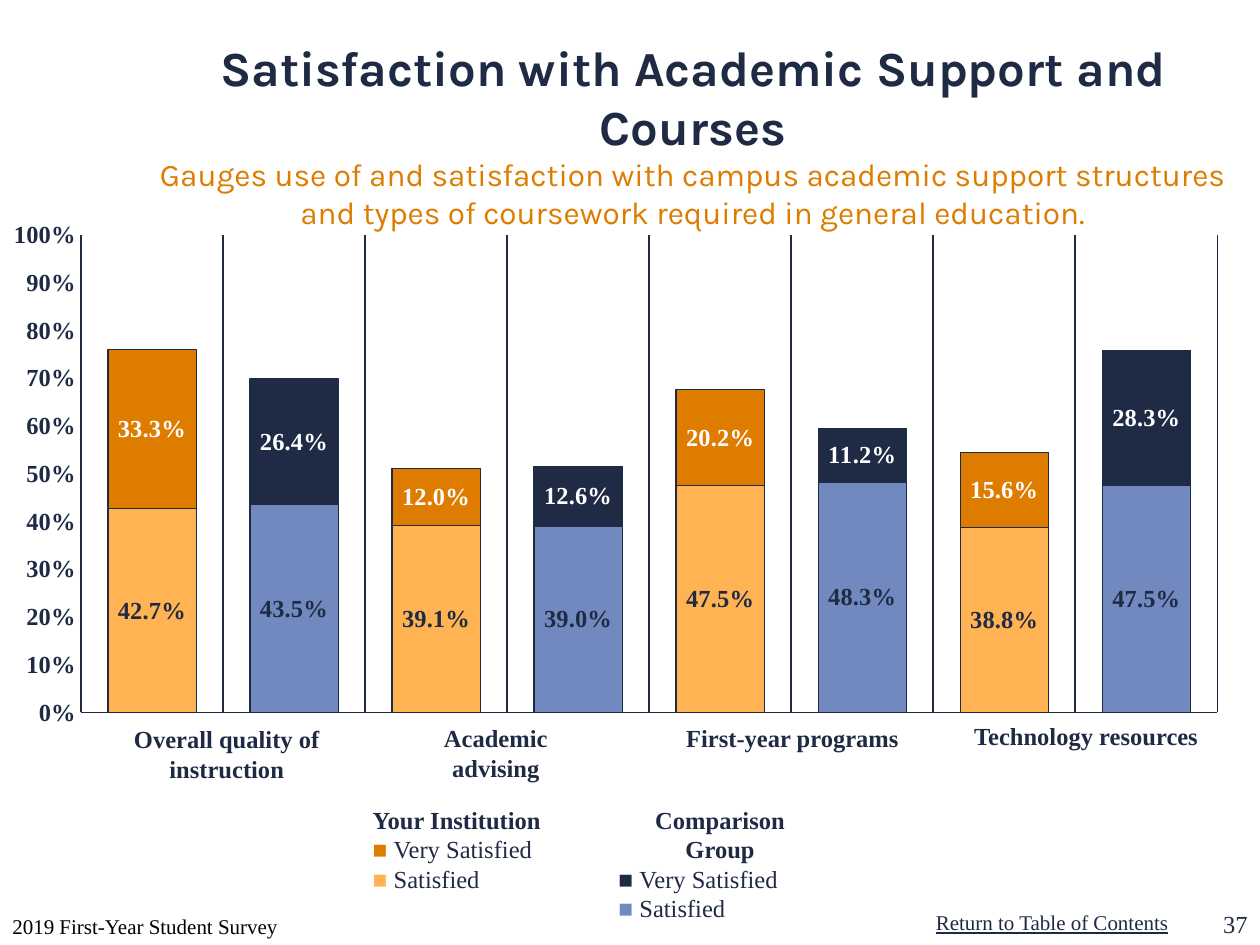
from dataclasses import dataclass

from lxml import etree
from pptx import Presentation
from pptx.chart.data import CategoryChartData
from pptx.dml.color import RGBColor
from pptx.enum.chart import XL_CHART_TYPE as ChartType
from pptx.enum.chart import XL_LABEL_POSITION as LabelPosition
from pptx.enum.chart import XL_TICK_LABEL_POSITION as TickLabels
from pptx.enum.chart import XL_TICK_MARK as TickMark
from pptx.enum.text import MSO_ANCHOR as Anchor
from pptx.enum.text import MSO_AUTO_SIZE as AutoSize
from pptx.enum.text import PP_ALIGN as Align
from pptx.oxml.ns import qn
from pptx.util import Inches, Pt


@dataclass(frozen=True)
class Theme:
    """Colours, fonts and type sizes of the deck."""
    navy: str = "1F2A44"
    orange: str = "DE7C00"
    light_orange: str = "FFB352"
    blue: str = "7289BF"
    white: str = "FFFFFF"
    black: str = "000000"
    head_font: str = "Karla"
    body_font: str = "Times New Roman"
    title: int = 28
    subtitle: int = 18
    body: int = 14
    small: int = 12


THEME = Theme()


def style_font(font, size=THEME.body, color=THEME.navy, bold=False,
               name=THEME.body_font, underline=None):
    """Format a font of a text span or a chart part."""
    font.name, font.size, font.bold = name, Pt(size), bold
    font.underline = underline
    font.color.rgb = RGBColor.from_string(color)


def add_span(para, text, **style):
    """Append formatted text to a paragraph."""
    span = para.add_run()
    span.text = text
    style_font(span.font, **style)


def add_box(slide, box, anchor=Anchor.TOP):
    """Add a wrapping text box and return its frame."""
    frame = slide.shapes.add_textbox(*map(Inches, box)).text_frame
    frame.word_wrap = True
    frame.vertical_anchor = anchor
    return frame


def add_text(slide, box, text, align=Align.LEFT, anchor=Anchor.TOP, **style):
    """Add a text box that holds one paragraph."""
    para = add_box(slide, box, anchor).paragraphs[0]
    para.alignment = align
    add_span(para, text, **style)


def place_title(slide, box, heading, subtitle):
    """Fill and move the title placeholder."""
    title = slide.shapes.title
    title.left, title.top, title.width, title.height = map(Inches, box)
    frame = title.text_frame
    frame.word_wrap = True
    frame.auto_size = AutoSize.NONE
    frame.vertical_anchor = Anchor.TOP
    para = frame.paragraphs[0]
    para.alignment = Align.CENTER
    add_span(para, heading, size=THEME.title, bold=True, name=THEME.head_font)
    para.add_line_break()
    add_span(para, subtitle, size=THEME.subtitle, color=THEME.orange,
             name=THEME.head_font)


def style_line(line, width):
    """Give a chart line the navy colour and a width."""
    line.color.rgb = RGBColor.from_string(THEME.navy)
    line.width = Pt(width)


def set_plot_layout(chart, **fractions):
    """Fix the inner plot area as fractions of the chart."""
    plot_area = chart._chartSpace.chart.plotArea
    for old in plot_area.findall(qn("c:layout")):
        plot_area.remove(old)
    layout = etree.Element(qn("c:layout"))
    manual = etree.SubElement(layout, qn("c:manualLayout"))
    settings = {"layoutTarget": "inner", "xMode": "edge", "yMode": "edge"}
    for tag, value in (settings | fractions).items():
        etree.SubElement(manual, qn(f"c:{tag}")).set("val", str(value))
    plot_area.insert(0, layout)


def style_axes(chart):
    """Format the percent axis and the unlabelled category axis."""
    category, value = chart.category_axis, chart.value_axis
    for axis in (category, value):
        axis.major_tick_mark = axis.minor_tick_mark = TickMark.NONE
    category.tick_label_position = TickLabels.NONE
    category.has_major_gridlines = True
    style_line(category.major_gridlines.format.line, 1)
    style_line(category.format.line, 0.75)
    value.has_major_gridlines = False
    value.minimum_scale, value.maximum_scale, value.major_unit = 0, 1, 0.1
    value.tick_labels.number_format = "0%"
    value.tick_labels.number_format_is_linked = False
    style_font(value.tick_labels.font, bold=True)
    style_line(value.format.line, 1)


def style_series(series, colors, label_color):
    """Alternate the column colours and label the values."""
    series.format.fill.solid()
    series.format.fill.fore_color.rgb = RGBColor.from_string(colors[0])
    style_line(series.format.line, 0.75)
    for index in range(len(series.values)):
        point = series.points[index].format
        point.fill.solid()
        point.fill.fore_color.rgb = RGBColor.from_string(colors[index % 2])
        style_line(point.line, 0.75)
    labels = series.data_labels
    labels.show_value = True
    labels.number_format = "0.0%"
    labels.number_format_is_linked = False
    labels.position = LabelPosition.CENTER
    style_font(labels.font, color=label_color, bold=True)


def place_chart(slide, box, satisfied, very_satisfied):
    """Add the stacked columns of both groups."""
    data = CategoryChartData()
    data.categories = [str(number + 1) for number in range(len(satisfied))]
    data.add_series("Satisfied", satisfied)
    data.add_series("Very Satisfied", very_satisfied)
    chart = slide.shapes.add_chart(
        ChartType.COLUMN_STACKED, *map(Inches, box), data).chart
    chart.has_title = chart.has_legend = False
    style_font(chart.font, size=THEME.subtitle, color=THEME.white)
    set_plot_layout(chart, x=0.055, y=0.029, w=0.946, h=0.933)
    style_axes(chart)
    plot = chart.plots[0]
    plot.gap_width, plot.overlap = 61, 100
    plot.vary_by_categories = False
    lower, upper = plot.series
    style_series(lower, (THEME.light_orange, THEME.blue), THEME.navy)
    style_series(upper, (THEME.orange, THEME.navy), THEME.white)


def place_legend(slide, box, heading, colors, align=Align.LEFT, inset=0):
    """Add a group heading and its two colour keys."""
    frame = add_box(slide, box)
    para = frame.paragraphs[0]
    para.alignment = align
    for side in ("marL", "marR"):
        para._p.get_or_add_pPr().set(side, str(Inches(inset)))
    add_span(para, heading, bold=True)
    for color, label in zip(colors, ("Very Satisfied", "Satisfied")):
        para = frame.add_paragraph()
        add_span(para, "■ ", color=color, bold=True)
        add_span(para, label)


def place_footer(slide, top):
    """Add the survey name, the contents link text and the page number."""
    add_text(slide, (0, top, 3.17, 0.5), "2019 First-Year Student Survey",
             anchor=Anchor.BOTTOM, size=THEME.small, color=THEME.black)
    add_text(slide, (7.33, top + 0.17, 2.07, 0.3), "Return to Table of Contents",
             size=THEME.small, underline=True)
    add_text(slide, (9.4, top, 0.6, 0.5), "37", Align.RIGHT, Anchor.BOTTOM)


def main():
    """Build the slide and save the deck."""
    deck = Presentation()
    deck.slide_width, deck.slide_height = Inches(10), Inches(7.5)
    slide = deck.slides.add_slide(deck.slide_layouts[5])
    place_title(slide, (1, 0.25, 9, 1.25),
                "Satisfaction with Academic Support and Courses",
                "Gauges use of and satisfaction with campus academic support "
                "structures and types of coursework required in general education.")
    place_chart(slide, (0.11, 1.75, 9.56, 4.06),
                (0.427, 0.435, 0.391, 0.39, 0.475, 0.483, 0.388, 0.475),
                (0.333, 0.264, 0.12, 0.126, 0.202, 0.112, 0.156, 0.283))
    for text, box in (
            ("Overall quality of instruction", (0.76, 5.7, 2.08, 0.57)),
            ("Academic advising", (3.06, 5.69, 1.75, 0.57)),
            ("First-year programs", (5.33, 5.69, 1.92, 0.34)),
            ("Technology resources", (7.58, 5.67, 2.08, 0.34))):
        add_text(slide, box, text, Align.CENTER, bold=True)
    place_legend(slide, (2.86, 6.34, 1.95, 1.04), "Your Institution",
                 (THEME.orange, THEME.light_orange))
    place_legend(slide, (4.81, 6.34, 1.81, 1.04), "Comparison Group",
                 (THEME.navy, THEME.blue), Align.CENTER, inset=0.25)
    place_footer(slide, 7)
    deck.save("out.pptx")


if __name__ == "__main__":
    main()
